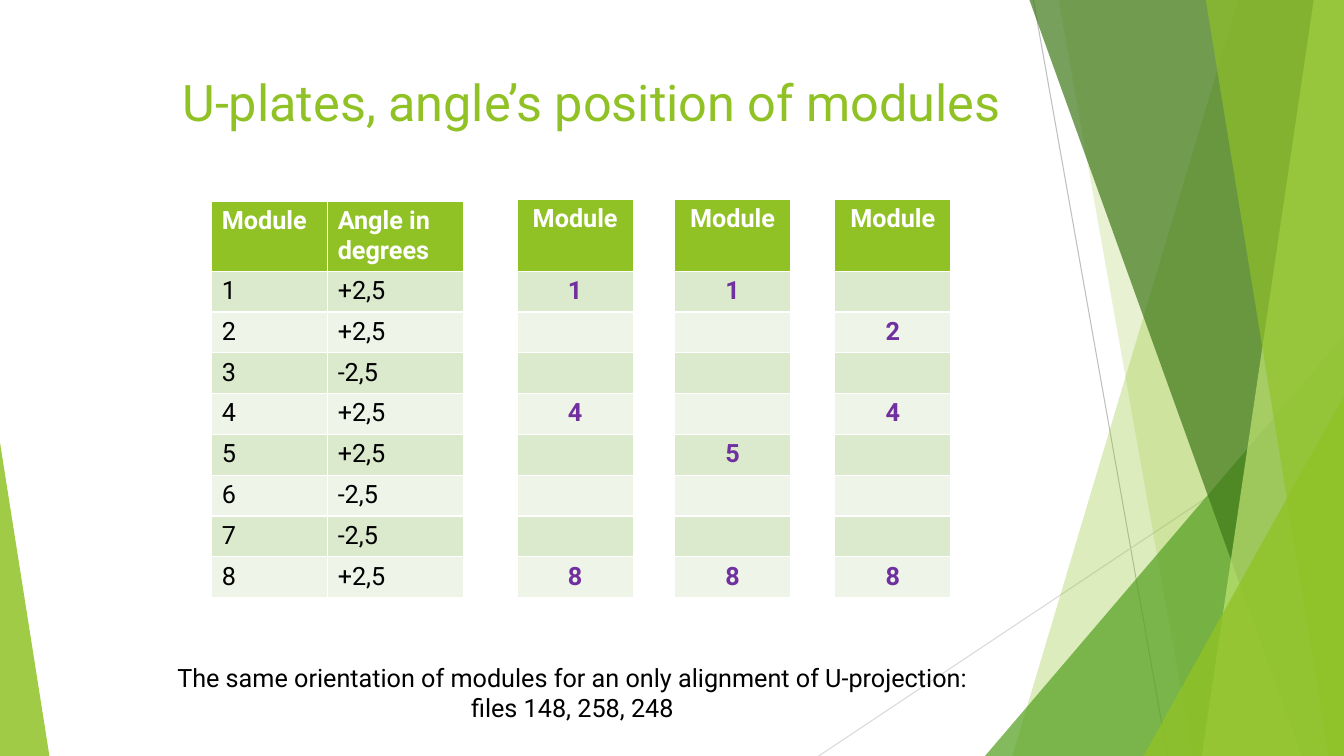
from collections import namedtuple

from lxml.etree import SubElement
from pptx import Presentation
from pptx.dml.color import RGBColor
from pptx.enum.shapes import MSO_CONNECTOR, MSO_SHAPE
from pptx.enum.text import MSO_ANCHOR, MSO_AUTO_SIZE, PP_ALIGN
from pptx.oxml.ns import qn
from pptx.util import Inches, Pt

Box = namedtuple("Box", "left top width height")

WIDTH, HEIGHT = 13.33, 7.5
FONT = "Roboto"
COLORS = {
    "lime": "90C226", "green": "54A021", "forest": "3F7819", "pale": "C0E474",
    "band_dark": "DBE9CD", "band_light": "EEF4E8", "purple": "7030A0",
    "white": "FFFFFF", "black": "000000", "line": "BFBFBF", "line_light": "D9D9D9",
}
ANGLES = ["+2,5", "+2,5", "-2,5", "+2,5", "+2,5", "-2,5", "-2,5", "+2,5"]
FILE_TABLES = [(5.13, (1, 4, 8)), (6.69, (1, 5, 8)), (8.28, (2, 4, 8))]


def color(name):
    return RGBColor.from_string(COLORS[name])


def place(shape, box):
    shape.left, shape.top, shape.width, shape.height = map(Inches, box)


def style_text(para, size, color_name, align=None, bold=False):
    para.alignment = align
    para.font.name = FONT
    para.font.size = Pt(size)
    para.font.bold = bold
    para.font.color.rgb = color(color_name)


def fill_facet(shape, color_name, opacity):
    """Fill a shape without outline; opacity is in percent."""
    shape.shadow.inherit = False
    shape.line.fill.background()
    shape.fill.solid()
    shape.fill.fore_color.rgb = color(color_name)
    tone = shape.fill._xPr.find(qn("a:solidFill"))[0]
    SubElement(tone, qn("a:alpha"), val=str(opacity * 1000))


def add_thin_line(page, start, end, color_name):
    line = page.shapes.add_connector(
        MSO_CONNECTOR.STRAIGHT, *map(Inches, start + end))
    line.line.color.rgb = color(color_name)
    line.line.width = Pt(0.75)
    SubElement(line._element.spPr, qn("a:effectLst"))


def add_band(page, top_left, bottom_left, color_name, opacity):
    """Slanted band that reaches from its left edge to the slide's right side."""
    builder = page.shapes.build_freeform(Inches(top_left), 0)
    corners = [(WIDTH, 0), (WIDTH, HEIGHT), (bottom_left, HEIGHT)]
    builder.add_line_segments([(Inches(x), Inches(y)) for x, y in corners])
    fill_facet(builder.convert_to_shape(), color_name, opacity)


def add_corner(page, box, peak, color_name, opacity):
    """Right triangle; peak 0 puts its tip at the left, 1 at the right."""
    corner = page.shapes.add_shape(MSO_SHAPE.ISOSCELES_TRIANGLE, *map(Inches, box))
    corner.adjustments[0] = peak
    fill_facet(corner, color_name, opacity)


def add_facets(page):
    add_thin_line(page, (10.25, 0), (11.58, HEIGHT), "line")
    add_thin_line(page, (WIDTH, 4.03), (8.12, HEIGHT), "line_light")
    add_band(page, 12.28, 10.04, "lime", 30)
    add_band(page, 10.5, 11.83, "lime", 20)
    add_corner(page, Box(9.77, 3.33, 3.56, 4.17), 1, "green", 72)
    add_band(page, 10.21, 12.91, "forest", 70)
    add_band(page, 13.03, 11.92, "pale", 70)
    add_band(page, 11.96, 13.18, "lime", 65)
    add_corner(page, Box(11.34, 3.93, 1.99, 3.57), 1, "lime", 80)
    add_corner(page, Box(0, 4.39, 0.49, 3.11), 0, "lime", 85)


def add_title(page, box):
    title = page.shapes.title
    place(title, box)
    title.text_frame.text = "U-plates, angle’s position of modules"
    title.text_frame.vertical_anchor = MSO_ANCHOR.TOP
    style_text(title.text_frame.paragraphs[0], 36, "lime", PP_ALIGN.CENTER)


def add_module_table(page, box, rows, widths, header_height,
                     body_color, align=None, bold=False):
    frame = page.shapes.add_table(len(rows), len(widths), *map(Inches, box))
    table = frame.table
    for column, width in zip(table.columns, widths):
        column.width = Inches(width)
    row_height = (box.height - header_height) / (len(rows) - 1)
    for index, values in enumerate(rows):
        header = index == 0
        table.rows[index].height = Inches(header_height if header else row_height)
        band = "lime" if header else "band_dark" if index % 2 else "band_light"
        for cell, value in zip(table.rows[index].cells, values):
            cell.fill.solid()
            cell.fill.fore_color.rgb = color(band)
            cell.text = value
            style_text(cell.text_frame.paragraphs[0], 18,
                       "white" if header else body_color, align, header or bold)


def add_tables(page):
    angle_rows = [("Module", "Angle in degrees")]
    angle_rows += [(str(number), angle) for number, angle in enumerate(ANGLES, 1)]
    add_module_table(page, Box(2.1, 2, 2.5, 3.93), angle_rows, [1.15, 1.35],
                     0.69, "black")
    for left, modules in FILE_TABLES:
        rows = [("Module",)]
        rows += [(str(number) if number in modules else "",)
                 for number in range(1, len(ANGLES) + 1)]
        add_module_table(page, Box(left, 1.98, 1.15, 3.95), rows, [1.15],
                         0.71, "purple", PP_ALIGN.CENTER, True)


def add_caption(page, box):
    frame = page.shapes.add_textbox(*map(Inches, box)).text_frame
    frame.word_wrap = False
    frame.auto_size = MSO_AUTO_SIZE.SHAPE_TO_FIT_TEXT
    frame.text = ("The same orientation of modules for an only alignment of "
                  "U-projection:\nfiles 148, 258, 248")
    for para, align in zip(frame.paragraphs, (PP_ALIGN.LEFT, PP_ALIGN.CENTER)):
        style_text(para, 18, "black", align)


def main():
    deck = Presentation()
    deck.slide_width, deck.slide_height = Inches(WIDTH), Inches(HEIGHT)
    page = deck.slides.add_slide(deck.slide_layouts.get_by_name("Title Only"))
    add_facets(page)
    add_title(page, Box(1.17, 0.66, 9.4, 1.44))
    add_tables(page)
    add_caption(page, Box(1.66, 6.52, 8.42, 0.71))
    deck.save("out.pptx")


if __name__ == "__main__":
    main()
